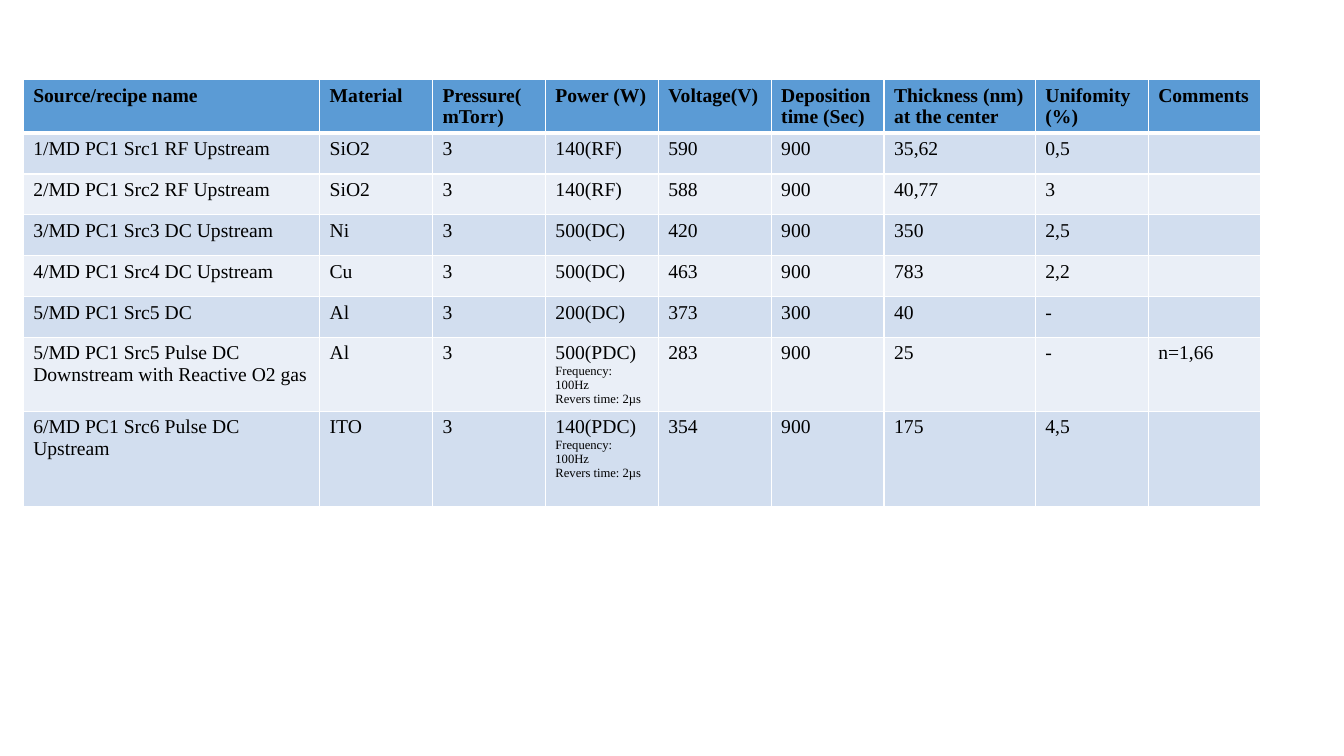
"""Build a slide with a table of sputtering recipes and their results."""
from dataclasses import dataclass

from lxml import etree
from pptx import Presentation
from pptx import util as u
from pptx.dml.color import RGBColor
from pptx.oxml.ns import qn
from pptx.table import _Cell

FONT = "Times New Roman"
BLACK = RGBColor(0x00, 0x00, 0x00)
WHITE = RGBColor(0xFF, 0xFF, 0xFF)
HEADER_BLUE = RGBColor(0x5B, 0x9B, 0xD5)
BAND_DARK = RGBColor(0xD2, 0xDE, 0xEF)
BAND_LIGHT = RGBColor(0xEA, 0xEF, 0xF7)

TEXT_SIZE = 14
NOTE_SIZE = 9
ROW_HEIGHT = 0.405
COLUMN_WIDTHS = [2.94, 1.12, 1.12, 1.12, 1.12, 1.12, 1.5, 1.12, 1.12]
HEADINGS = [
    "Source/recipe name", "Material", "Pressure(mTorr)", "Power (W)", "Voltage(V)",
    "Deposition time (Sec)", "Thickness (nm)\nat the center", "Unifomity (%)", "Comments",
]
PULSE_NOTES = ("Frequency: 100Hz", "Revers time: 2µs")


@dataclass(frozen=True)
class Recipe:
    """One deposition recipe with its measured results."""

    name: str
    material: str
    power: str
    voltage: str
    time: str
    thickness: str
    uniformity: str
    comment: str = ""
    power_notes: tuple[str, ...] = ()
    height: float = ROW_HEIGHT
    pressure: str = "3"

    def values(self) -> list[str]:
        """Return the cell texts in column order."""
        return [self.name, self.material, self.pressure, self.power, self.voltage,
                self.time, self.thickness, self.uniformity, self.comment]


RECIPES = [
    Recipe("1/MD PC1 Src1 RF Upstream", "SiO2", "140(RF)", "590", "900", "35,62", "0,5"),
    Recipe("2/MD PC1 Src2 RF Upstream", "SiO2", "140(RF)", "588", "900", "40,77", "3"),
    Recipe("3/MD PC1 Src3 DC Upstream", "Ni", "500(DC)", "420", "900", "350", "2,5"),
    Recipe("4/MD PC1 Src4 DC Upstream", "Cu", "500(DC)", "463", "900", "783", "2,2"),
    Recipe("5/MD PC1 Src5 DC", "Al", "200(DC)", "373", "300", "40", "-"),
    Recipe("5/MD PC1 Src5 Pulse DC Downstream with Reactive O2 gas", "Al", "500(PDC)",
           "283", "900", "25", "-", "n=1,66", PULSE_NOTES, 0.73),
    Recipe("6/MD PC1 Src6 Pulse DC Upstream", "ITO", "140(PDC)",
           "354", "900", "175", "4,5", "", PULSE_NOTES, 0.95),
]


def add_borders(cell: _Cell, top: float, bottom: float) -> None:
    """Draw white borders around a cell, with widths in points."""
    properties = cell._tc.get_or_add_tcPr()
    for side, width in (("lnL", 1), ("lnR", 1), ("lnT", top), ("lnB", bottom)):
        line = etree.SubElement(properties, qn(f"a:{side}"), w=str(u.Pt(width)))
        fill = etree.SubElement(line, qn("a:solidFill"))
        etree.SubElement(fill, qn("a:srgbClr"), val=str(WHITE))


def fill_cell(cell: _Cell, text: str, color: RGBColor, bold: bool = False,
              notes: tuple[str, ...] = ()) -> None:
    """Colour a cell and write its main lines, then its smaller notes."""
    cell.fill.solid()
    cell.fill.fore_color.rgb = color
    lines = [(line, TEXT_SIZE) for line in text.split("\n") if line]
    lines += [(note, NOTE_SIZE) for note in notes]
    for index, (line, size) in enumerate(lines):
        frame = cell.text_frame
        para = frame.add_paragraph() if index else frame.paragraphs[0]
        span = para.add_run()
        span.text = line
        span.font.name = FONT
        span.font.size = u.Pt(size)
        span.font.bold = bold
        span.font.color.rgb = BLACK


def main() -> None:
    """Create the deck and save it."""
    deck = Presentation()
    deck.slide_width, deck.slide_height = u.Inches(13.33), u.Inches(7.5)
    page = deck.slides.add_slide(deck.slide_layouts[6])
    heights = [0.53] + [recipe.height for recipe in RECIPES]
    table = page.shapes.add_table(
        len(heights), len(COLUMN_WIDTHS), u.Inches(0.23), u.Inches(0.79),
        u.Inches(sum(COLUMN_WIDTHS)), u.Inches(sum(heights))).table
    for column, width in zip(table.columns, COLUMN_WIDTHS):
        column.width = u.Inches(width)
    for row, height in zip(table.rows, heights):
        row.height = u.Inches(height)

    for column, heading in enumerate(HEADINGS):
        cell = table.cell(0, column)
        add_borders(cell, top=1, bottom=3)
        fill_cell(cell, heading, HEADER_BLUE, bold=True)
    power_column = HEADINGS.index("Power (W)")
    for row, recipe in enumerate(RECIPES, start=1):
        band = BAND_DARK if row % 2 else BAND_LIGHT
        for column, value in enumerate(recipe.values()):
            cell = table.cell(row, column)
            add_borders(cell, top=3 if row == 1 else 1, bottom=1)
            notes = recipe.power_notes if column == power_column else ()
            fill_cell(cell, value, band, notes=notes)
    deck.save("out.pptx")


if __name__ == "__main__":
    main()
